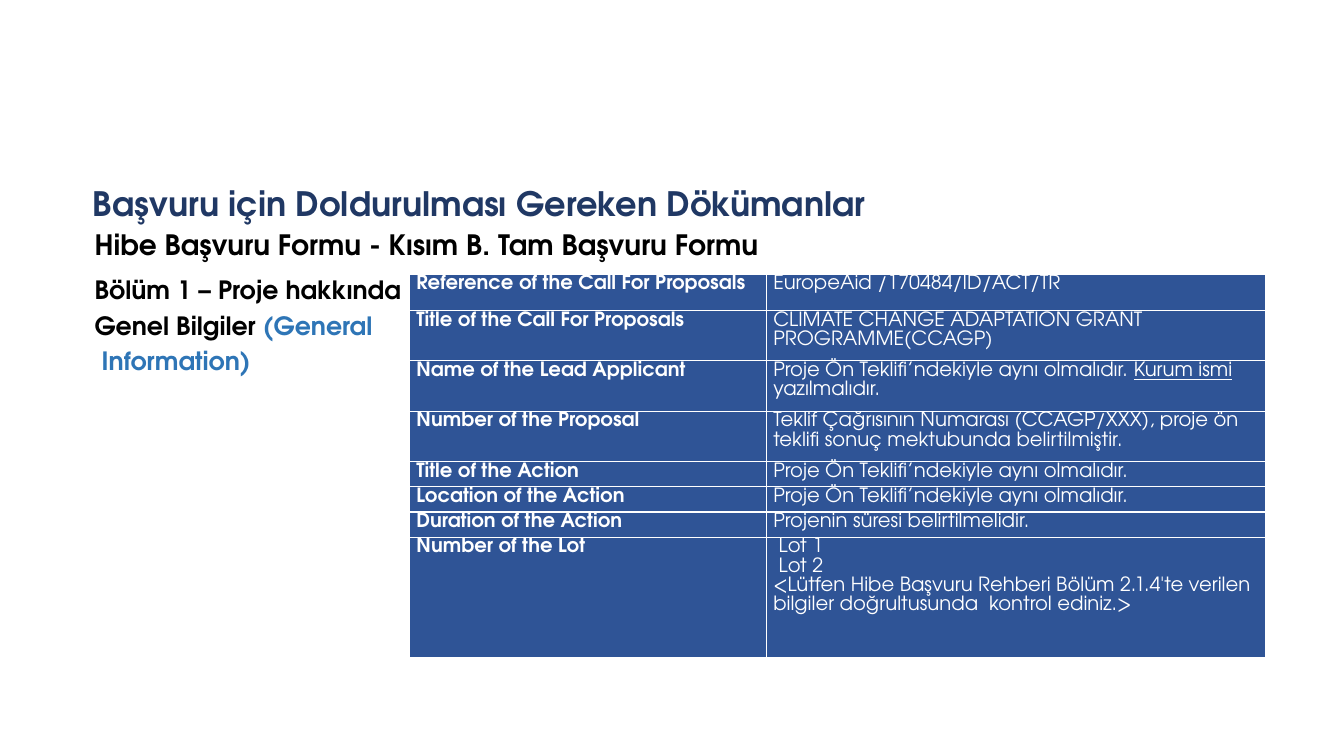
from dataclasses import dataclass

from lxml import etree
from pptx import Presentation
from pptx.dml.color import RGBColor
from pptx.enum.text import MSO_AUTO_SIZE, PP_ALIGN
from pptx.oxml.ns import qn
from pptx.util import Inches, Pt

CENTER = PP_ALIGN.CENTER
GROW = MSO_AUTO_SIZE.SHAPE_TO_FIT_TEXT


@dataclass(frozen=True)
class Theme:
    font: str = "TeX Gyre Adventor"
    navy: str = "203864"
    black: str = "000000"
    sky: str = "2E75B6"
    cell: str = "2F5496"
    white: str = "FFFFFF"
    title: int = 24
    subtitle: int = 20
    section: int = 18
    table: int = 14
    border: int = 1


THEME = Theme()


class Page:
    """Holds the style and the current slide."""

    def __init__(self, deck, theme):
        self.theme = theme
        self.slide = deck.slides.add_slide(deck.slide_layouts[6])

    def fill_para(self, para, spans, para_format):
        """Each span is a text with its font values."""
        for name, value in para_format.items():
            setattr(para, name, value)
        for text, style in spans:
            span = para.add_run()
            span.text = text
            span.font.name = self.theme.font
            values = dict(style)
            span.font.color.rgb = RGBColor.from_string(values.pop("color"))
            for name, value in values.items():
                setattr(span.font, name, value)

    def fill_frame(self, frame, paras):
        for index, (spans, para_format) in enumerate(paras):
            para = frame.add_paragraph() if index else frame.paragraphs[0]
            self.fill_para(para, spans, para_format)

    def text(self, place, paras, frame_format, indent=0):
        box = self.slide.shapes.add_textbox(*map(Inches, place))
        for name, value in frame_format.items():
            setattr(box.text_frame, name, value)
        self.fill_frame(box.text_frame, paras)
        if indent:
            for para in box.text_frame.paragraphs:
                properties = para._p.get_or_add_pPr()
                properties.set("marL", str(Inches(indent)))
                properties.set("indent", "0")

    def border(self, cell):
        properties = cell._tc.get_or_add_tcPr()
        for side in ("lnL", "lnR", "lnT", "lnB"):
            line = etree.SubElement(properties, qn(f"a:{side}"),
                                    w=str(Pt(self.theme.border)))
            paint = etree.SubElement(line, qn("a:solidFill"))
            etree.SubElement(paint, qn("a:srgbClr"), val=self.theme.white)

    def table(self, place, widths, heights, rows):
        table = self.slide.shapes.add_table(
            len(rows), len(widths), *map(Inches, place)).table
        for column, width in zip(table.columns, widths):
            column.width = Inches(width)
        for row, height in zip(table.rows, heights):
            row.height = Inches(height)
        margins = {"margin_left": Inches(0.07), "margin_right": Inches(0.07),
                   "margin_top": 0, "margin_bottom": 0}
        for row, contents in zip(table.rows, rows):
            for cell, paras in zip(row.cells, contents):
                for name, value in margins.items():
                    setattr(cell, name, value)
                self.border(cell)
                cell.fill.solid()
                cell.fill.fore_color.rgb = RGBColor.from_string(self.theme.cell)
                self.fill_frame(cell.text_frame, paras)


LABEL = {"size": Pt(THEME.table), "color": THEME.white, "bold": True}
VALUE = {**LABEL, "bold": False}
LINKED = {**VALUE, "underline": True}
CELL_PARA = {"line_spacing": 1.07}

SAME_AS_CONCEPT = "Proje Ön Teklifi’ndekiyle aynı olmalıdır."

# Row height, label, and the paragraphs of the value as lists of spans
FORM_ROWS = [
    (0.36, "Reference of the Call For Proposals",
     [[("EuropeAid /170484/ID/ACT/TR", VALUE)]]),
    (0.48, "Title of the Call For Proposals",
     [[("CLIMATE CHANGE ADAPTATION GRANT PROGRAMME(CCAGP)", VALUE)]]),
    (0.5, "Name of the Lead Applicant",
     [[(SAME_AS_CONCEPT + " ", VALUE), ("Kurum ismi", LINKED),
       (" yazılmalıdır.", VALUE)]]),
    (0.48, "Number of the Proposal",
     [[("Teklif Çağrısının Numarası (CCAGP/XXX), proje ön teklifi sonuç "
        "mektubunda belirtilmiştir.", VALUE)]]),
    (0.23, "Title of the Action", [[(SAME_AS_CONCEPT, VALUE)]]),
    (0.24, "Location of the Action", [[(SAME_AS_CONCEPT, VALUE)]]),
    (0.23, "Duration of the Action",
     [[("Projenin süresi belirtilmelidir.", VALUE)]]),
    (1.19, "Number of the Lot",
     [[(" Lot 1", VALUE)], [(" Lot 2", VALUE)],
      [("<Lütfen Hibe Başvuru Rehberi Bölüm 2.1.4'te verilen bilgiler "
        "doğrultusunda  kontrol ediniz.>", VALUE)]]),
]


def main():
    deck = Presentation()
    deck.slide_width, deck.slide_height = Inches(13.33), Inches(7.5)
    page = Page(deck, THEME)

    # Title
    title = {"size": Pt(THEME.title), "color": THEME.navy, "bold": True}
    page.text((0.79, 1.77, 7.92, 0.5),
              [([("Başvuru için Doldurulması Gereken Dökümanlar", title)],
                {"alignment": CENTER})],
              {"word_wrap": False, "auto_size": GROW})

    # Form name and section heading
    subtitle = {"size": Pt(THEME.subtitle), "color": THEME.black, "bold": True}
    section = {**subtitle, "size": Pt(THEME.section)}
    english = {**section, "color": THEME.sky}
    first = {"line_spacing": 0.9, "space_after": Pt(6)}
    following = {"line_spacing": 0.9, "space_before": Pt(6)}
    page.text((0.79, 2.17, 11.76, 3.87),
              [([("Hibe Başvuru Formu - Kısım B. Tam Başvuru Formu", subtitle)],
                first),
               ([("Bölüm 1 – Proje hakkında", section)], following),
               ([("Genel Bilgiler ", section), ("(General", english)],
                following),
               ([(" Information)", english)], following)],
              {"word_wrap": True, "margin_top": Inches(0.12)}, indent=0.05)

    # General information table
    rows = [([([(label, LABEL)], CELL_PARA)],
             [(spans, CELL_PARA) for spans in value])
            for _, label, value in FORM_ROWS]
    page.table((4.06, 2.72, 8.49, 3.71), (3.54, 4.95),
               [height for height, _, _ in FORM_ROWS], rows)

    deck.save("out.pptx")


if __name__ == "__main__":
    main()
